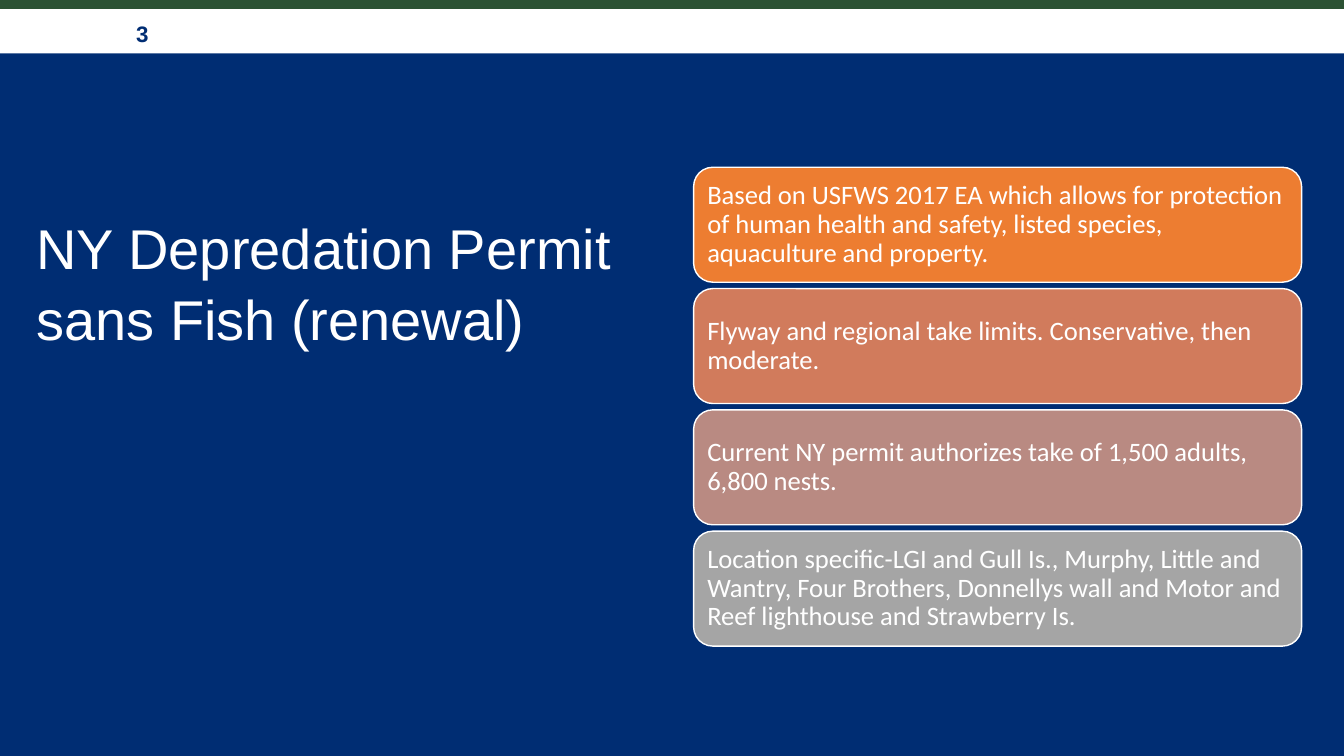
from pptx import Presentation
from pptx.dml.color import RGBColor
from pptx.enum.shapes import MSO_SHAPE as Shape
from pptx.enum.text import MSO_ANCHOR as Anchor, MSO_AUTO_SIZE as AutoSize, PP_ALIGN as Align
from pptx.util import Inches, Pt

TITLE = "NY Depredation Permit sans Fish (renewal)"
PAGE_NUMBER = "3"
CARDS = [
    ("Based on USFWS 2017 EA which allows for protection of human health and safety, "
     "listed species, aquaculture and property.", "orange"),
    ("Flyway and regional take limits. Conservative, then moderate.", "terracotta"),
    ("Current NY permit authorizes take of 1,500 adults, 6,800 nests.", "rose"),
    ("Location specific-LGI and Gull Is., Murphy, Little and Wantry, Four Brothers, "
     "Donnellys wall and Motor and Reef lighthouse and Strawberry Is.", "gray"),
]
COLORS = {"navy": "002D73", "green": "2C5234", "white": "FFFFFF", "orange": "ED7D31",
          "terracotta": "D17B5C", "rose": "B98A82", "gray": "A5A5A5"}

WIDTH, HEIGHT = 13.33, 7.5
STRIP_HEIGHT, BAND_HEIGHT = 0.09, 0.44
CARD_LEFT, CARD_TOP, CARD_WIDTH, CARD_HEIGHT = 6.88, 1.66, 6.03, 1.14
CARD_PITCH = 1.2033


def color(name):
    return RGBColor.from_string(COLORS[name])


def add_block(kind, left, top, width, height, fill, line=None):
    block = page.shapes.add_shape(kind, Inches(left), Inches(top), Inches(width), Inches(height))
    block.shadow.inherit = False
    block.fill.solid()
    block.fill.fore_color.rgb = color(fill)
    if line:
        block.line.color.rgb = color(line)
        block.line.width = Pt(1)
    else:
        block.line.fill.background()
    return block


def write(shape, text, font, size, ink, insets, anchor=Anchor.MIDDLE, bold=False):
    """Fill a shape with one left-aligned paragraph; insets are left, top, right, bottom."""
    frame = shape.text_frame
    frame.word_wrap = True
    frame.auto_size = AutoSize.NONE
    frame.vertical_anchor = anchor
    (frame.margin_left, frame.margin_top,
     frame.margin_right, frame.margin_bottom) = map(Inches, insets)
    para = frame.paragraphs[0]
    para.text = text
    para.alignment = Align.LEFT
    para.font.name, para.font.size, para.font.bold = font, Pt(size), bold
    para.font.color.rgb = color(ink)
    return para


deck = Presentation()
deck.slide_width, deck.slide_height = Inches(WIDTH), Inches(HEIGHT)
page = deck.slides.add_slide(deck.slide_layouts[5])
page.background.fill.solid()
page.background.fill.fore_color.rgb = color("navy")

title = page.shapes.title
title.left, title.top, title.width, title.height = map(Inches, (0.36, 2.08, 6.08, 4.99))
heading = write(title, TITLE, "Arial", 40, "white", (0, 0, 0, 0), Anchor.TOP)
heading.line_spacing = 1.06

add_block(Shape.RECTANGLE, 0, 0, WIDTH, STRIP_HEIGHT, "green")
band = add_block(Shape.RECTANGLE, 0, STRIP_HEIGHT, WIDTH, BAND_HEIGHT, "white")
write(band, PAGE_NUMBER, "Arial", 16, "navy", (1.35, 0.12, 0.4, 0.08), bold=True)

for row, (text, fill) in enumerate(CARDS):
    card = add_block(Shape.ROUNDED_RECTANGLE, CARD_LEFT, CARD_TOP + row * CARD_PITCH,
                     CARD_WIDTH, CARD_HEIGHT, fill, line="white")
    write(card, text, "Calibri", 19, "white", (0.08,) * 4).line_spacing = 0.9

deck.save("out.pptx")
